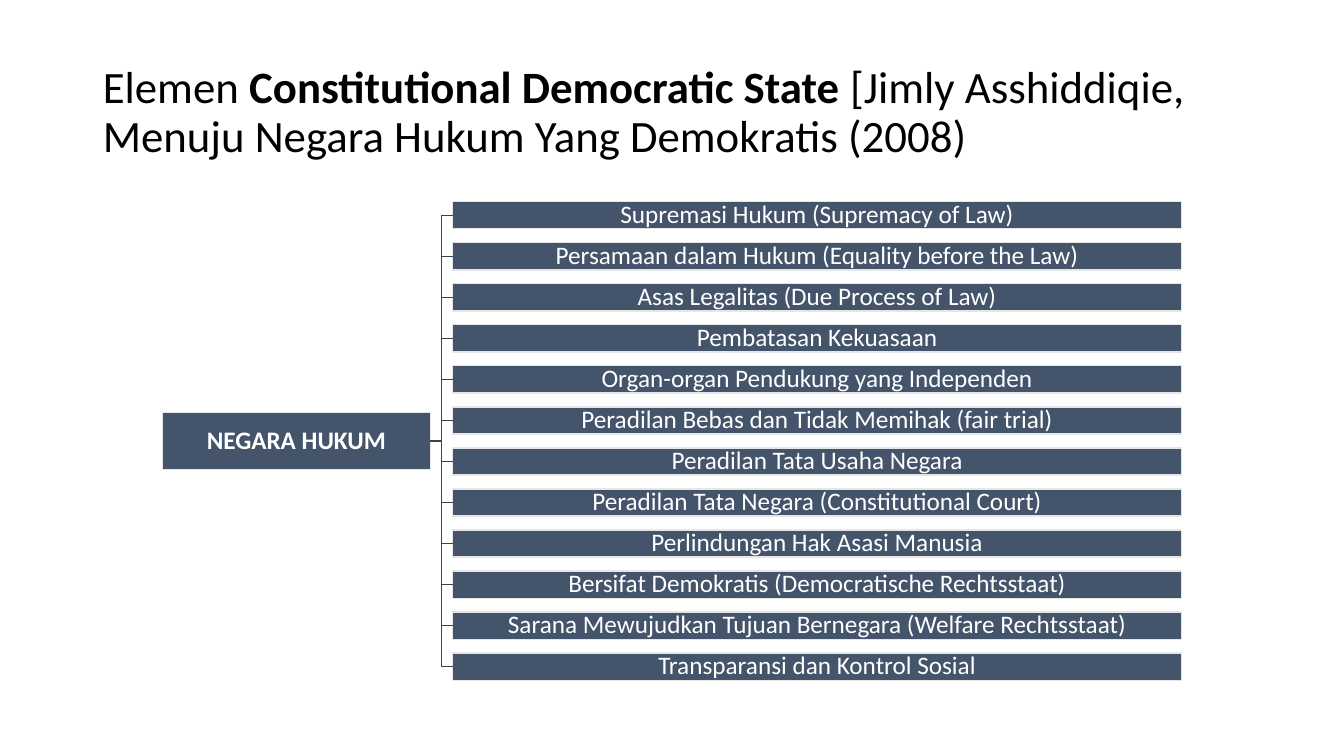
from lxml.etree import SubElement
from pptx import Presentation
from pptx.dml.color import RGBColor
from pptx.enum.shapes import MSO_CONNECTOR as Connector, MSO_SHAPE as Shape
from pptx.enum.text import MSO_ANCHOR as Anchor, MSO_AUTO_SIZE as AutoSize, PP_ALIGN as Align
from pptx.oxml.ns import qn
from pptx.util import Inches, Pt

TITLE_RUNS = [
    ("Elemen", False),
    (" Constitutional Democratic State ", True),
    ("[Jimly Asshiddiqie, Menuju Negara Hukum Yang Demokratis (2008)", False),
]
ROOT = "NEGARA HUKUM"
ELEMENTS = [
    "Supremasi Hukum (Supremacy of Law)",
    "Persamaan dalam Hukum (Equality before the Law)",
    "Asas Legalitas (Due Process of Law)",
    "Pembatasan Kekuasaan",
    "Organ-organ Pendukung yang Independen",
    "Peradilan Bebas dan Tidak Memihak (fair trial)",
    "Peradilan Tata Usaha Negara",
    "Peradilan Tata Negara (Constitutional Court)",
    "Perlindungan Hak Asasi Manusia",
    "Bersifat Demokratis (Democratische Rechtsstaat)",
    "Sarana Mewujudkan Tujuan Bernegara (Welfare Rechtsstaat)",
    "Transparansi dan Kontrol Sosial",
]


def color(value):
    """Turn a hex string into a colour."""
    return RGBColor.from_string(value)


def add_text(paragraph, text, size=18, bold=False, fill="FFFFFF", font="Calibri"):
    """Append a formatted run to a paragraph."""
    run = paragraph.add_run()
    run.text = text
    run.font.name = font
    run.font.size = Pt(size)
    run.font.bold = bold
    run.font.color.rgb = color(fill)


class TreeSlide:
    """Draw a tree on one slide, with lengths in percent of the slide's size."""

    box_fill, box_line, link_line, ink = "44546A", "E7E6E6", "364355", "000000"

    def __init__(self, presentation):
        """Add a title-only slide and remember the slide's size."""
        self.width, self.height = presentation.slide_width, presentation.slide_height
        self.slide = presentation.slides.add_slide(presentation.slide_layouts[5])

    def area(self, left, top, width, height):
        """Convert shares of the slide to lengths."""
        return [int(share * side / 100) for share, side in
                zip((left, top, width, height), (self.width, self.height) * 2)]

    def frame(self, shape, align):
        """Prepare a shape's text frame and return its first paragraph."""
        frame = shape.text_frame
        frame.word_wrap = True
        frame.auto_size = AutoSize.NONE
        frame.vertical_anchor = Anchor.MIDDLE
        paragraph = frame.paragraphs[0]
        paragraph.alignment = align
        paragraph.line_spacing = 0.9
        return paragraph

    def title(self, runs, *area):
        """Fill and place the title placeholder."""
        shape = self.slide.shapes.title
        shape.left, shape.top, shape.width, shape.height = self.area(*area)
        paragraph = self.frame(shape, Align.LEFT)
        for text, bold in runs:
            add_text(paragraph, text, size=32, bold=bold, fill=self.ink)

    def box(self, text, *area, bold=False):
        """Add a labelled rectangle."""
        shape = self.slide.shapes.add_shape(Shape.RECTANGLE, *self.area(*area))
        shape.shadow.inherit = False
        shape.fill.solid()
        shape.fill.fore_color.rgb = color(self.box_fill)
        shape.line.color.rgb = color(self.box_line)
        shape.line.width = Pt(1)
        paragraph = self.frame(shape, Align.CENTER)
        frame = shape.text_frame
        frame.margin_left = frame.margin_right = Inches(0.01)
        frame.margin_top = frame.margin_bottom = Inches(0.01)
        add_text(paragraph, text, bold=bold)
        return shape

    def link(self, parent, child):
        """Join a parent's right side to a child's left side."""
        connector = self.slide.shapes.add_connector(Connector.ELBOW, 0, 0, 0, 0)
        connector.begin_connect(parent, 3)
        connector.end_connect(child, 1)
        connector.line.color.rgb = color(self.link_line)
        connector.line.width = Pt(1)
        SubElement(connector._element.spPr, qn("a:effectLst"))


def main():
    """Build and save the presentation."""
    presentation = Presentation()
    presentation.slide_width, presentation.slide_height = Inches(13.33), Inches(7.5)
    tree = TreeSlide(presentation)
    tree.title(TITLE_RUNS, 6.9, 5.33, 86.27, 19.33)

    first_top, pitch, row_height, root_height = 26.67, 5.43, 3.6, 7.47
    center = first_top + (pitch * (len(ELEMENTS) - 1) + row_height) / 2
    root = tree.box(ROOT, 12.08, center - root_height / 2, 19.95, root_height, bold=True)
    for row, element in enumerate(ELEMENTS):
        child = tree.box(element, 33.68, first_top + row * pitch, 54.23, row_height)
        tree.link(root, child)
    presentation.save("out.pptx")


if __name__ == "__main__":
    main()
